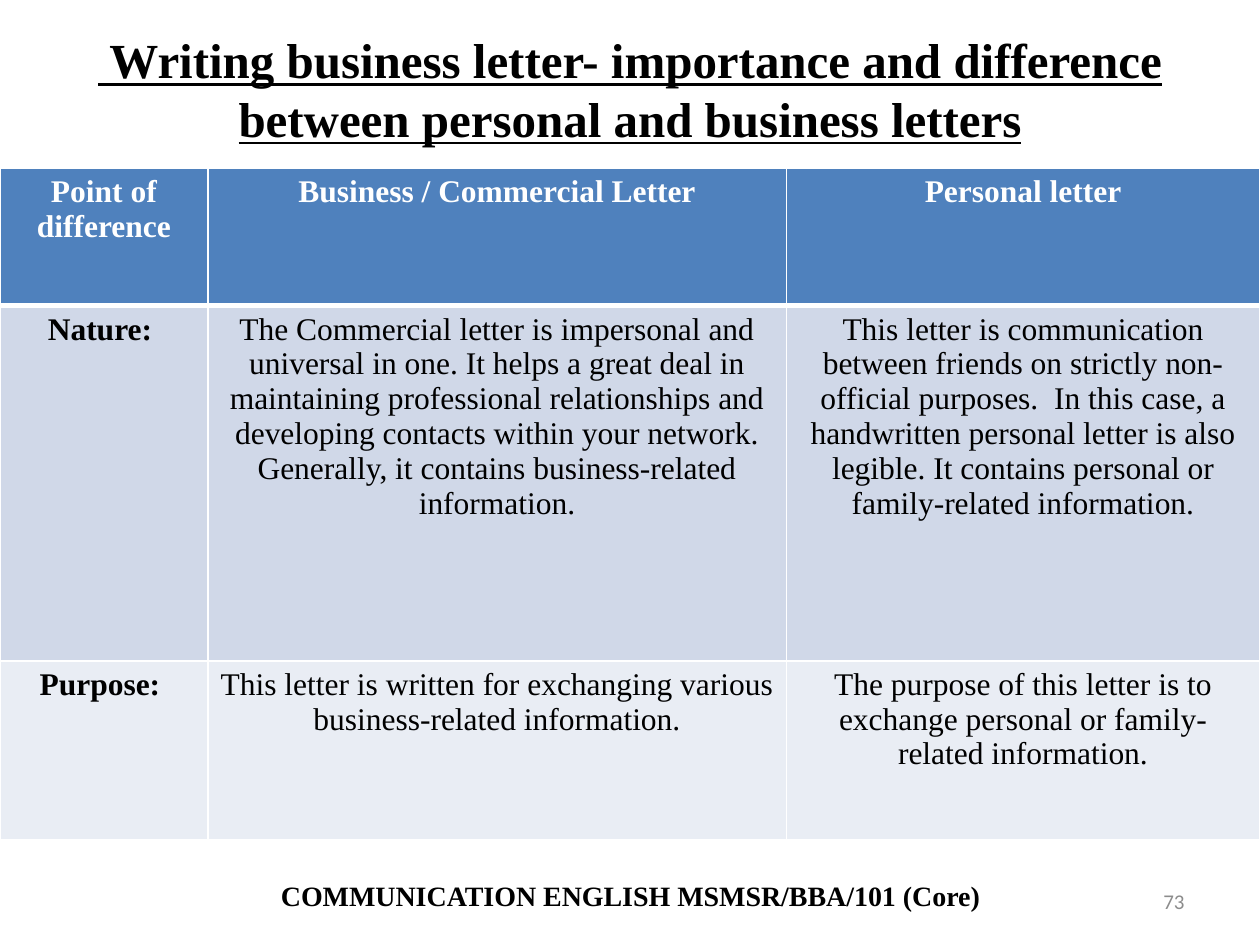
from typing import NamedTuple

from lxml.etree import SubElement
from pptx import Presentation
from pptx.dml.color import RGBColor
from pptx.enum.text import MSO_ANCHOR, PP_ALIGN
from pptx.oxml.ns import qn
from pptx.util import Cm, Pt

BLACK = RGBColor(0x00, 0x00, 0x00)
WHITE = RGBColor(0xFF, 0xFF, 0xFF)
GREY = RGBColor(0x8C, 0x8C, 0x8C)
HEADER_BLUE = RGBColor(0x4F, 0x81, 0xBD)
BAND_DARK = RGBColor(0xD0, 0xD8, 0xE8)
BAND_LIGHT = RGBColor(0xE9, 0xED, 0xF4)
SERIF = "Times New Roman"


class Style(NamedTuple):
    size: int
    color: RGBColor = BLACK
    bold: bool = True
    underline: bool = False
    font: str = SERIF
    align: PP_ALIGN = PP_ALIGN.CENTER


class Caption(NamedTuple):
    text: str
    box: tuple[float, float, float, float]
    style: Style
    anchor: MSO_ANCHOR = MSO_ANCHOR.MIDDLE
    bottom_inset: float = 0.13


class Row(NamedTuple):
    height: float
    fill: RGBColor
    texts: tuple[str, str, str]


CAPTIONS = (
    Caption(" Writing business letter- importance and difference between personal and business letters",
            (1.27, 0.76, 22.86, 3.18), Style(28, underline=True), bottom_inset=1.25),
    Caption("COMMUNICATION ENGLISH MSMSR/BBA/101 (Core)",
            (2.34, 17.58, 20.75, 0.94), Style(16), MSO_ANCHOR.TOP),
    Caption("73", (18.2, 17.65, 5.93, 1.02),
            Style(12, GREY, bold=False, font="Calibri", align=PP_ALIGN.RIGHT)),
)
COLUMN_WIDTHS = (4.19, 11.66, 9.55)
ROWS = (
    Row(2.77, HEADER_BLUE, ("Point of difference", "Business / Commercial Letter", "Personal letter")),
    Row(7.16, BAND_DARK, (
        "Nature:\u00a0",
        "The Commercial letter is impersonal and universal in one. It helps a great deal in "
        "maintaining professional relationships and developing contacts within your network. "
        "Generally, it contains business-related information.",
        "This letter is communication between friends on strictly non-official purposes.\u00a0 "
        "In this case, a handwritten personal letter is also legible. "
        "It contains personal or family-related information.")),
    Row(3.61, BAND_LIGHT, (
        "Purpose:\u00a0",
        "This letter is written for exchanging various business-related information.",
        "The purpose of this letter is to exchange personal or family-related information.")),
)


def write(frame, text: str, style: Style) -> None:
    frame.text = text
    paragraph = frame.paragraphs[0]
    paragraph.alignment = style.align
    font = paragraph.font
    font.name, font.size = style.font, Pt(style.size)
    font.bold, font.underline = style.bold, style.underline
    font.color.rgb = style.color


def add_caption(slide, caption: Caption) -> None:
    frame = slide.shapes.add_textbox(*map(Cm, caption.box)).text_frame
    frame.word_wrap = True
    frame.vertical_anchor = caption.anchor
    frame.margin_bottom = Cm(caption.bottom_inset)
    write(frame, caption.text, caption.style)


def set_borders(cell, bottom_width: int) -> None:
    properties = cell._tc.get_or_add_tcPr()
    widths = {"a:lnL": 1, "a:lnR": 1, "a:lnT": 1, "a:lnB": bottom_width}
    for position, (side, width) in enumerate(widths.items()):
        line = SubElement(properties, qn(side), w=str(Pt(width)))
        properties.insert(position, line)
        fill = SubElement(line, qn("a:solidFill"))
        SubElement(fill, qn("a:srgbClr"), val=str(WHITE))


def add_comparison(slide) -> None:
    table = slide.shapes.add_table(
        len(ROWS), len(COLUMN_WIDTHS), Cm(0), Cm(3.39),
        Cm(sum(COLUMN_WIDTHS)), Cm(sum(row.height for row in ROWS))).table
    for column, width in zip(table.columns, COLUMN_WIDTHS):
        column.width = Cm(width)
    for row_index, row in enumerate(ROWS):
        table.rows[row_index].height = Cm(row.height)
        is_header = row_index == 0
        for column_index, text in enumerate(row.texts):
            cell = table.cell(row_index, column_index)
            cell.fill.solid()
            cell.fill.fore_color.rgb = row.fill
            set_borders(cell, 3 if is_header else 1)
            write(cell.text_frame, text, Style(
                18, WHITE if is_header else BLACK, bold=is_header or column_index == 0))


def main() -> None:
    """Build the slide comparing business and personal letters."""
    presentation = Presentation()
    presentation.slide_width, presentation.slide_height = Cm(25.4), Cm(19.05)
    slide = presentation.slides.add_slide(presentation.slide_layouts[6])
    title, *footers = CAPTIONS
    add_caption(slide, title)
    add_comparison(slide)
    for footer in footers:
        add_caption(slide, footer)
    presentation.save("out.pptx")


if __name__ == "__main__":
    main()
